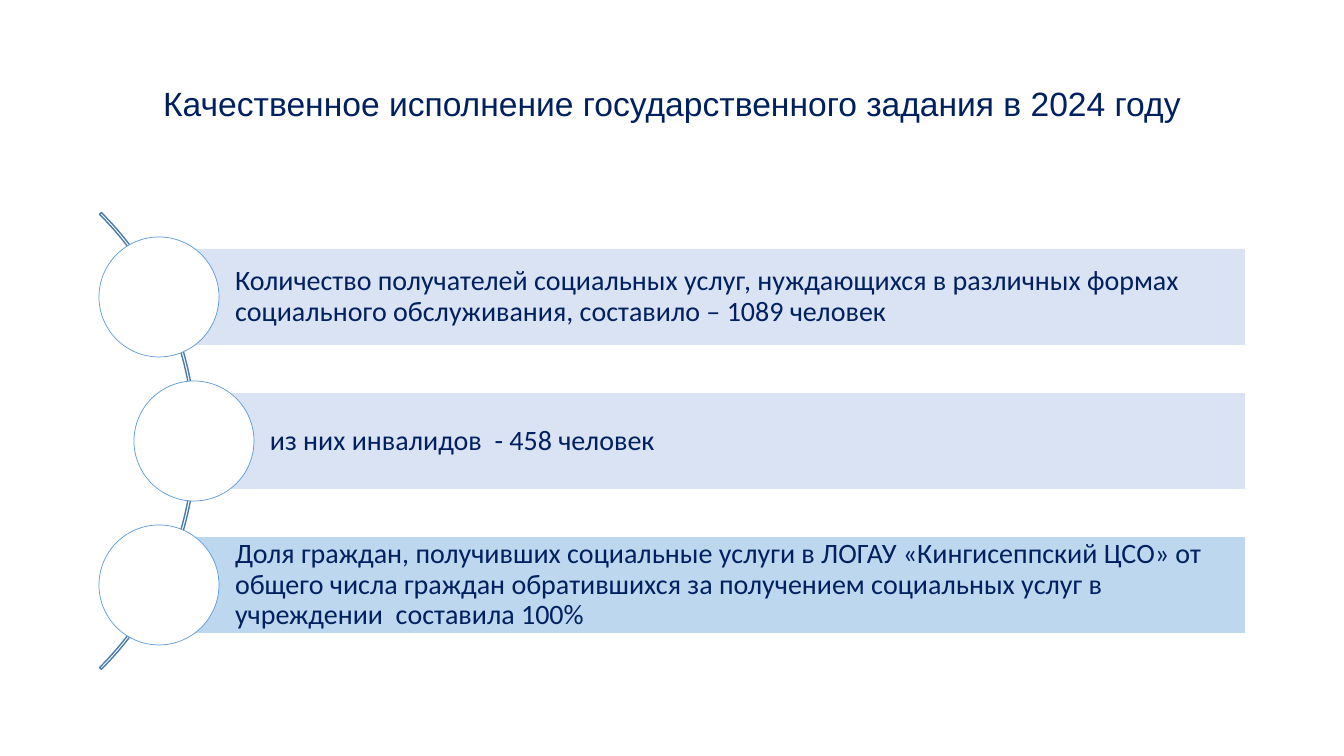
"""Build the slide on how the 2024 state assignment was fulfilled."""
from dataclasses import dataclass

from pptx import Presentation
from pptx import util as u
from pptx.dml.color import RGBColor
from pptx.enum import shapes, text

EMU_PER_PX = 12192000 / 1344
NAVY = RGBColor(0x00, 0x20, 0x60)
WHITE = RGBColor(0xFF, 0xFF, 0xFF)
LAVENDER = RGBColor(0xDA, 0xE3, 0xF3)
SKY = RGBColor(0xBD, 0xD7, 0xEE)
RING = RGBColor(0x5B, 0x9B, 0xD5)
STEEL = RGBColor(0x49, 0x7C, 0xAB)

CENTER_Y, ROW_PITCH = 441, 144
BAR_RIGHT, BAR_HEIGHT = 1245, 96
CIRCLE = 120
ARC_LEFT, ARC_SIZE = -450, 646


@dataclass(frozen=True)
class Result:
    center_x: int
    wording: str
    fill: RGBColor


RESULTS = (
    Result(159, "Количество получателей социальных услуг, нуждающихся в различных "
                "формах социального обслуживания, составило – 1089 человек", LAVENDER),
    Result(194, "из них инвалидов  - 458 человек", LAVENDER),
    Result(159, "Доля граждан, получивших социальные услуги в ЛОГАУ «Кингисеппский ЦСО» "
                "от общего числа граждан обратившихся за получением социальных услуг в "
                "учреждении  составила 100%", SKY),
)


def px(length: float) -> u.Emu:
    return u.Emu(round(length * EMU_PER_PX))


def add_figure(slide, kind, left: float, top: float, width: float, height: float,
               fill: RGBColor | None = None, line: RGBColor | None = None,
               weight: float = 1):
    figure = slide.shapes.add_shape(kind, px(left), px(top), px(width), px(height))
    figure.shadow.inherit = False
    if fill is None:
        figure.fill.background()
    else:
        figure.fill.solid()
        figure.fill.fore_color.rgb = fill
    if line is None:
        figure.line.fill.background()
    else:
        figure.line.color.rgb = line
        figure.line.width = u.Pt(weight)
    return figure


def write(shape, wording: str, *, font: str, size: int, align, left_inset: int,
          inset: int) -> None:
    frame = shape.text_frame
    frame.word_wrap = True
    frame.vertical_anchor = text.MSO_ANCHOR.MIDDLE
    frame.margin_left = px(left_inset)
    frame.margin_right = frame.margin_top = frame.margin_bottom = px(inset)
    paragraph = frame.paragraphs[0]
    paragraph.alignment = align
    paragraph.line_spacing = 0.9
    run = paragraph.add_run()
    run.text = wording
    run.font.name = font
    run.font.size = u.Pt(size)
    run.font.color.rgb = NAVY


def add_title(slide) -> None:
    title = slide.shapes.add_textbox(px(92), px(40), px(1160), px(132))
    write(title, "Качественное исполнение государственного задания в 2024 году",
          font="Arial", size=24, align=text.PP_ALIGN.CENTER, left_inset=10, inset=10)


def add_arc(slide) -> None:
    arc = add_figure(slide, shapes.MSO_SHAPE.BLOCK_ARC, ARC_LEFT,
                     CENTER_Y - ARC_SIZE / 2, ARC_SIZE, ARC_SIZE, line=STEEL)
    for index, value in enumerate((189, 27, 0.004)):
        arc.adjustments[index] = value


def add_result(slide, result: Result, center_y: int) -> None:
    bar = add_figure(slide, shapes.MSO_SHAPE.RECTANGLE, result.center_x,
                     center_y - BAR_HEIGHT / 2, BAR_RIGHT - result.center_x,
                     BAR_HEIGHT, fill=result.fill)
    write(bar, result.wording, font="Calibri", size=20, align=text.PP_ALIGN.LEFT,
          left_inset=76, inset=6)
    add_figure(slide, shapes.MSO_SHAPE.OVAL, result.center_x - CIRCLE / 2,
               center_y - CIRCLE / 2, CIRCLE, CIRCLE, fill=WHITE, line=RING, weight=0.5)


def main() -> None:
    deck = Presentation()
    deck.slide_width, deck.slide_height = px(1344), px(756)
    slide = deck.slides.add_slide(deck.slide_layouts[6])
    add_title(slide)
    add_arc(slide)
    for row, result in enumerate(RESULTS, start=-1):
        add_result(slide, result, CENTER_Y + row * ROW_PITCH)
    deck.save("out.pptx")


if __name__ == "__main__":
    main()
